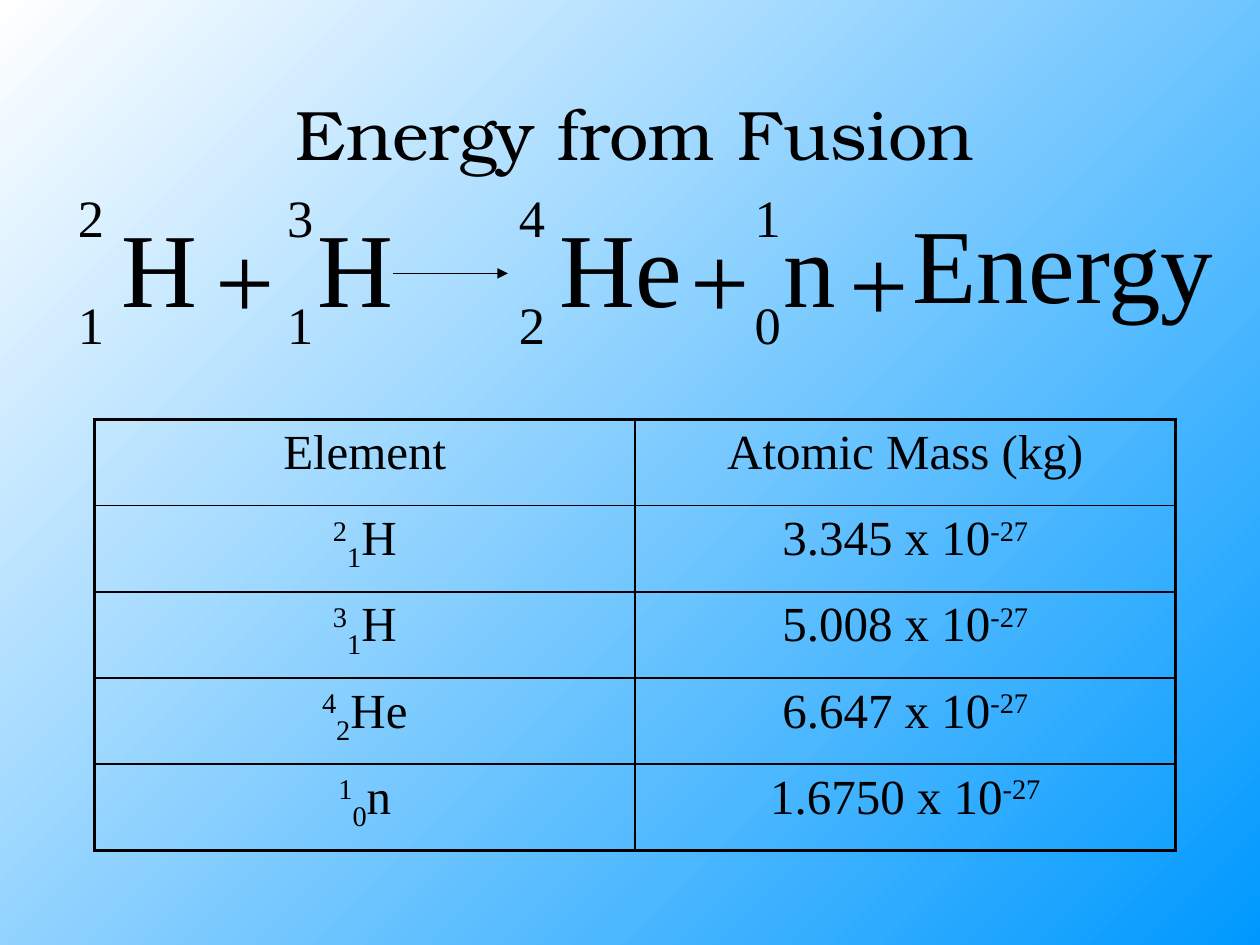
from typing import NamedTuple

from lxml import etree
from pptx import Presentation
from pptx import util as u
from pptx.dml.color import RGBColor
from pptx.enum import shapes, text
from pptx.oxml import ns

BLACK = RGBColor(0x00, 0x00, 0x00)
WHITE = RGBColor(0xFF, 0xFF, 0xFF)
BLUE = RGBColor(0x00, 0x99, 0xFF)
SERIF = "Times New Roman"
TITLE_FONT = "TeX Gyre Bonum"
SUPER, SUB = 30, -25  # percent of the font size
THICK, THIN = 2.25, 1
SYMBOL_TOP, PLUS_TOP = 1.56, 1.65
MASS_TOP, CHARGE_TOP = 1.42, 2.27


class Term(NamedTuple):
    """A large word or sign of the equation."""
    label: str
    left: float
    top: float
    width: float


class Nuclide(NamedTuple):
    mass: str
    charge: str
    symbol: str
    numbers_left: float
    symbol_left: float
    symbol_width: float
    kilograms: str


NUCLIDES = [
    Nuclide("2", "1", "H", 0.52, 0.87, 0.80, "3.345"),
    Nuclide("3", "1", "H", 2.18, 2.42, 0.80, "5.008"),
    Nuclide("4", "2", "He", 4.02, 4.34, 1.17, "6.647"),
    Nuclide("1", "0", "n", 5.89, 6.12, 0.62, "1.6750"),
]
TERMS = [
    Term("+", 1.61, PLUS_TOP, 0.67),
    Term("+", 5.38, PLUS_TOP, 0.67),
    Term("+", 6.64, 1.68, 0.67),
    Term("Energy", 7.14, 1.53, 2.61),
]


def add_span(para, words: str, size: float, font: str = SERIF, baseline: int = 0) -> None:
    span = para.add_run()
    span.text = words
    span.font.size = u.Pt(size)
    span.font.name = font
    span.font.color.rgb = BLACK
    if baseline:
        span._r.get_or_add_rPr().set("baseline", str(baseline * 1000))


def add_label(page, words: str, left: float, top: float, width: float,
              height: float, size: float, font: str = SERIF) -> None:
    box = page.shapes.add_textbox(u.Inches(left), u.Inches(top),
                                  u.Inches(width), u.Inches(height))
    box.text_frame.word_wrap = False
    box.text_frame.auto_size = text.MSO_AUTO_SIZE.SHAPE_TO_FIT_TEXT
    add_span(box.text_frame.paragraphs[0], words, size, font)


def add_nuclide(page, nuclide: Nuclide) -> None:
    add_label(page, nuclide.symbol, nuclide.symbol_left, SYMBOL_TOP,
              nuclide.symbol_width, 1.1, 60)
    for number, top in ((nuclide.mass, MASS_TOP), (nuclide.charge, CHARGE_TOP)):
        add_label(page, number, nuclide.numbers_left, top, 0.41, 0.6, 30)


def add_arrow(page, left: float, right: float, y: float) -> None:
    arrow = page.shapes.add_connector(shapes.MSO_CONNECTOR.STRAIGHT, u.Inches(left),
                                      u.Inches(y), u.Inches(right), u.Inches(y))
    arrow.line.color.rgb = BLACK
    arrow.line.width = u.Pt(0.75)
    etree.SubElement(arrow.line._get_or_add_ln(), ns.qn("a:tailEnd"), type="triangle")
    etree.SubElement(arrow._element.spPr, ns.qn("a:effectLst"))


def set_borders(cell, widths: dict[str, float]) -> None:
    """Put solid black lines ahead of the cell's fill, as the schema orders them."""
    props = cell._tc.get_or_add_tcPr()
    for index, (side, width) in enumerate(widths.items()):
        line = etree.Element(ns.qn(f"a:ln{side}"), w=str(u.Pt(width)))
        fill = etree.SubElement(line, ns.qn("a:solidFill"))
        etree.SubElement(fill, ns.qn("a:srgbClr"), val=str(BLACK))
        props.insert(index, line)


def fill_cell(cell, spans: list[tuple[str, int]]) -> None:
    cell.fill.background()
    para = cell.text_frame.paragraphs[0]
    para.alignment = text.PP_ALIGN.CENTER
    before = etree.SubElement(para._p.get_or_add_pPr(), ns.qn("a:spcBef"))
    etree.SubElement(before, ns.qn("a:spcPct"), val="20000")
    for words, baseline in spans:
        add_span(para, words, 28, baseline=baseline)


def add_mass_table(page) -> None:
    rows = [[[("Element", 0)], [("Atomic Mass (kg)", 0)]]]
    for item in NUCLIDES:
        rows.append([[(item.mass, SUPER), (item.charge, SUB), (item.symbol, 0)],
                     [(f"{item.kilograms} x 10", 0), ("-27", SUPER)]])
    last_row, last_col = len(rows) - 1, len(rows[0]) - 1
    table = page.shapes.add_table(len(rows), len(rows[0]), u.Inches(0.75), u.Inches(3.33),
                                  u.Inches(8.58), u.Inches(3.42)).table
    table.first_row = False
    table.horz_banding = False
    for r, row in enumerate(rows):
        for c, spans in enumerate(row):
            cell = table.cell(r, c)
            fill_cell(cell, spans)
            set_borders(cell, {
                "L": THICK if c == 0 else THIN,
                "R": THICK if c == last_col else THIN,
                "T": THICK if r == 0 else THIN,
                "B": THICK if r == last_row else THIN,
            })


def paint_background(page) -> None:
    fill = page.background.fill
    fill.gradient()
    fill.gradient_angle = 315  # counter-clockwise: top left to bottom right
    for stop, color, position in zip(fill.gradient_stops, (WHITE, BLUE), (0, 1)):
        stop.color.rgb = color
        stop.position = position


def main() -> None:
    deck = Presentation()
    deck.slide_width, deck.slide_height = u.Inches(10), u.Inches(7.5)
    page = deck.slides.add_slide(deck.slide_layouts[6])
    paint_background(page)
    add_label(page, "Energy from Fusion", 2.25, 0.67, 5.58, 0.77, 40, TITLE_FONT)
    add_mass_table(page)
    for nuclide in NUCLIDES:
        add_nuclide(page, nuclide)
    for term in TERMS:
        add_label(page, term.label, term.left, term.top, term.width, 1.1, 60)
    add_arrow(page, 3.12, 4.03, 2.17)
    deck.save("out.pptx")


if __name__ == "__main__":
    main()
